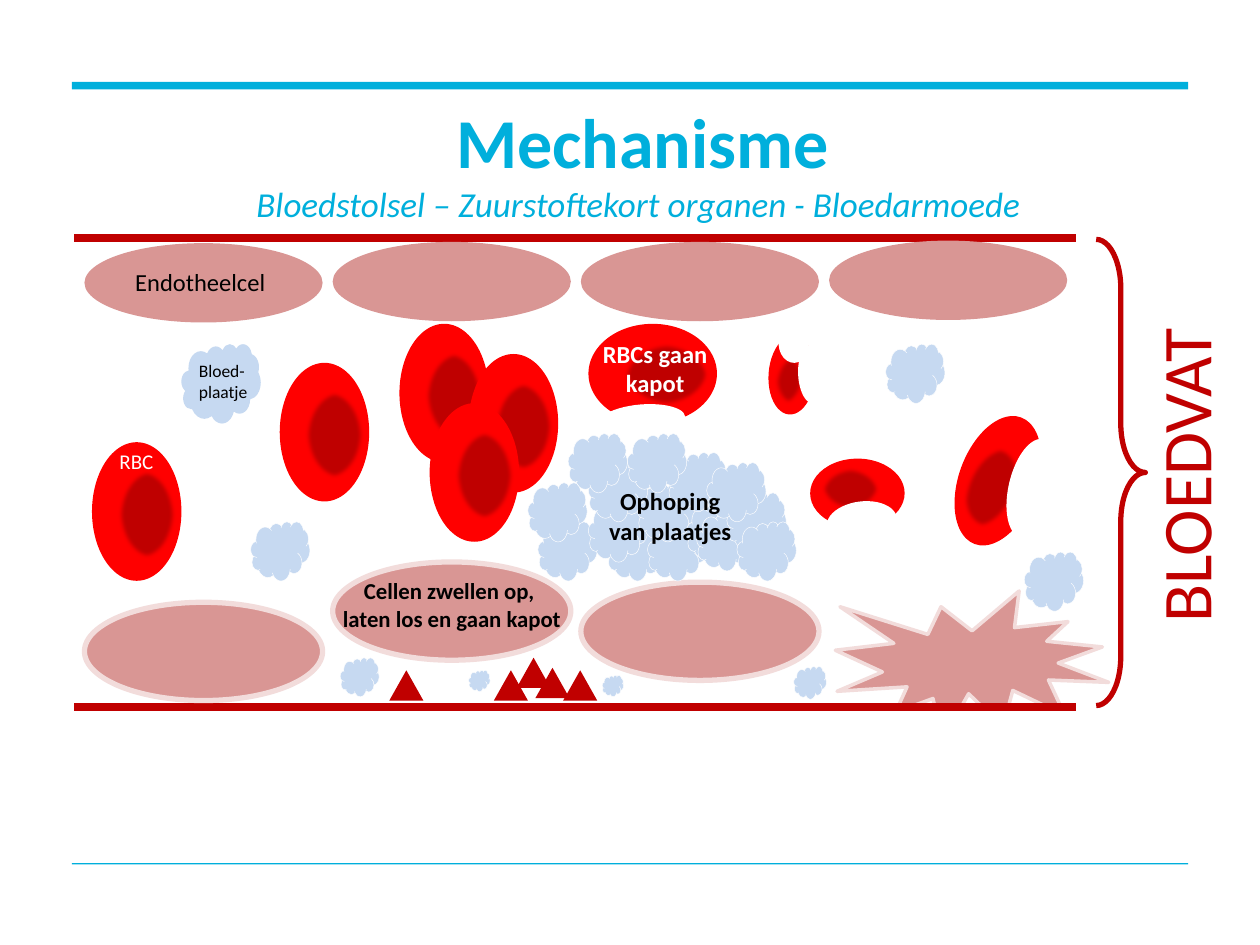
from dataclasses import dataclass
from typing import Any, Optional

from lxml import etree
from pptx import Presentation
from pptx import util as u
from pptx.dml.color import RGBColor
from pptx.enum import shapes, text
from pptx.oxml.ns import qn

EMU_PER_PX = 9144  # 100 px to the inch
COLORS = {
    "cyan": "00AFDC", "tissue": "D99694", "pale": "F2DCDB", "wall": "C00000",
    "cell": "FF0000", "platelet": "C6D9F1", "white": "FFFFFF", "black": "000000",
}
KIND = shapes.MSO_SHAPE
Box = tuple[int, int, int, int]


@dataclass(frozen=True)
class Style:
    kind: shapes.MSO_SHAPE
    fill: Optional[str] = None
    line: Optional[str] = None
    line_width: float = 0
    soft_edge: float = 0


@dataclass(frozen=True)
class Label:
    lines: tuple[str, ...]
    box: Box
    size: int
    color: str = "black"
    bold: bool = False
    centered: bool = True
    wrap: bool = False


@dataclass(frozen=True)
class BrokenCell:
    """A red cell and its nucleus share a rotation; white bites cut into them."""
    body: Box
    nucleus: Box
    rotation: float
    bites: tuple[tuple[Box, float], ...]


RULE = Style(KIND.RECTANGLE, "cyan")
MASK = Style(KIND.RECTANGLE, "white")
BURST = Style(KIND.EXPLOSION1, "tissue", "pale", 2)
ENDOTHELIUM = Style(KIND.OVAL, "tissue")
SWOLLEN = Style(KIND.OVAL, "tissue", "pale", 3)
BRACE = Style(KIND.RIGHT_BRACE, None, "wall", 3)
RED_CELL = Style(KIND.OVAL, "cell")
NUCLEUS = Style(KIND.OVAL, "wall", soft_edge=2.5)
BITE = Style(KIND.OVAL, "white")
PLATELET = Style(KIND.CLOUD, "platelet", "white", 0.25)
PLAIN_PLATELET = Style(KIND.CLOUD, "platelet")
FRAGMENT = Style(KIND.ISOSCELES_TRIANGLE, "wall")

CELL_LEFT, CELL_STEP, CELL_WIDTH = 67, 197, 189
ENDOTHELIUM_TOPS = (193, 192, 192, 191)
SWOLLEN_TOPS = (478, 446, 462)
RED_CELLS = ((73, 351), (222, 288), (317, 257), (372, 281), (341, 320))
CLOT = (
    (482, 414), (427, 414), (467, 399), (514, 414), (506, 383), (545, 399), (530, 359),
    (467, 367), (553, 406), (577, 391), (561, 367), (419, 383), (585, 414),
)
CLOT_TOP = ((498, 344), (451, 344))
LOOSE_PLATELETS = (
    (199, 414, 47), (703, 273, 47), (813, 438, 47), (270, 522, 31),
    (630, 529, 26), (478, 536, 17), (372, 532, 17),
)
FRAGMENTS = ((309, 532), (410, 522), (392, 532), (425, 530), (447, 532))
BROKEN_CELLS = (
    BrokenCell((610, 266, 37, 63), (614, 281, 25, 41), 184.1,
               (((621, 286, 47, 22), 267.1), ((615, 261, 30, 24), 267.1))),
    BrokenCell((653, 354, 55, 75), (657, 364, 36, 48), 269.8,
               (((656, 398, 56, 33), 352.7),)),
    BrokenCell((761, 328, 62, 107), (766, 353, 42, 68), 200.1,
               (((779, 369, 80, 37), 283.1),)),
    BrokenCell((467, 257, 102, 79), (495, 272, 68, 51), 0,
               (((475, 321, 69, 25), 355.4),)),
)
ENDOTHELIUM_LABEL = Label(("Endotheelcel",), (92, 207, 134, 34), 14)
RED_CELL_LABEL = Label(("RBC",), (85, 351, 47, 30), 12, "white", centered=False)
PLATELET_LABEL = Label(("Bloed-", "plaatje"), (148, 281, 59, 44), 10, centered=False)
SWOLLEN_LABEL = Label(("Cellen zwellen op, ", "laten los en gaan kapot"),
                      (260, 453, 197, 54), 13, bold=True)
CLOT_LABEL = Label(("Ophoping van plaatjes",), (469, 381, 126, 57), 14, bold=True, wrap=True)
BROKEN_LABEL = Label(("RBCs gaan kapot",), (465, 264, 110, 57), 14, "white", True, wrap=True)
VESSEL_LABEL = Label(("BLOEDVAT",), (901, 246, 88, 262), 40, "wall")


def px(*lengths: int) -> list[u.Emu]:
    return [u.Emu(length * EMU_PER_PX) for length in lengths]


def rgb(name: str) -> RGBColor:
    return RGBColor.from_string(COLORS[name])


def draw(container: Any, style: Style, box: Box, rotation: float = 0) -> Any:
    shape = container.add_shape(style.kind, *px(*box))
    shape.shadow.inherit = False
    shape.rotation = rotation
    if style.fill:
        shape.fill.solid()
        shape.fill.fore_color.rgb = rgb(style.fill)
    else:
        shape.fill.background()
    if style.line:
        shape.line.color.rgb = rgb(style.line)
        shape.line.width = u.Pt(style.line_width)
    else:
        shape.line.fill.background()
    if style.soft_edge:
        effects = shape._element.spPr.find(qn("a:effectLst"))
        etree.SubElement(effects, qn("a:softEdge"), rad=str(u.Pt(style.soft_edge)))
    return shape


def draw_wall(container: Any, top: int) -> None:
    wall = container.add_connector(shapes.MSO_CONNECTOR.STRAIGHT, *px(59, top, 854, top))
    wall.line.color.rgb = rgb("wall")
    wall.line.width = u.Pt(4.5)
    etree.SubElement(wall._element.spPr, qn("a:effectLst"))


def set_font(paragraph: Any, size: int, color: str, bold: bool, italic: bool = False) -> None:
    for run in paragraph.runs:
        run.font.name = "Calibri"
        run.font.size = u.Pt(size)
        run.font.color.rgb = rgb(color)
        run.font.bold = bold
        run.font.italic = italic


def write(container: Any, label: Label) -> Any:
    frame = container.add_textbox(*px(*label.box)).text_frame
    frame.word_wrap = label.wrap
    frame.auto_size = text.MSO_AUTO_SIZE.SHAPE_TO_FIT_TEXT
    frame.text = "\n".join(label.lines)
    for paragraph in frame.paragraphs:
        paragraph.alignment = text.PP_ALIGN.CENTER if label.centered else text.PP_ALIGN.LEFT
        set_font(paragraph, label.size, label.color, label.bold)
    return frame


def write_title(container: Any) -> None:
    frame = container.add_textbox(*px(67, 99, 886, 58)).text_frame
    frame.word_wrap = True
    frame.vertical_anchor = text.MSO_ANCHOR.MIDDLE
    frame.margin_left = frame.margin_top = frame.margin_right = frame.margin_bottom = 0
    frame.text = "Mechanisme\nBloedstolsel – Zuurstoftekort organen - Bloedarmoede "
    title, subtitle = frame.paragraphs
    title.alignment = subtitle.alignment = text.PP_ALIGN.CENTER
    set_font(title, 40, "cyan", True)
    set_font(subtitle, 20, "cyan", False, True)


def draw_red_cell(container: Any, left: int, top: int) -> None:
    group = container.add_group_shape().shapes
    draw(group, RED_CELL, (left, top, 71, 110))
    draw(group, NUCLEUS, (left + 20, top + 22, 47, 71))


def draw_broken_cell(container: Any, cell: BrokenCell) -> None:
    group = container.add_group_shape().shapes
    draw(group, RED_CELL, cell.body, cell.rotation)
    draw(group, NUCLEUS, cell.nucleus, cell.rotation)
    for box, rotation in cell.bites:
        draw(group, BITE, box, rotation)


def main() -> None:
    presentation = Presentation()
    presentation.slide_width, presentation.slide_height = px(1000, 750)
    canvas = presentation.slides.add_slide(presentation.slide_layouts[6]).shapes

    for top, height in ((65, 6), (685, 1)):
        draw(canvas, RULE, (57, top, 886, height))
    write_title(canvas)

    draw(canvas, BURST, (663, 469, 217, 118))
    draw(canvas, MASK, (703, 564, 150, 31))
    for top in (189, 561):
        draw_wall(canvas, top)
    for style, tops, height in ((ENDOTHELIUM, ENDOTHELIUM_TOPS, 63), (SWOLLEN, SWOLLEN_TOPS, 78)):
        for column, top in enumerate(tops):
            draw(canvas, style, (CELL_LEFT + column * CELL_STEP, top, CELL_WIDTH, height))
    brace = draw(canvas, BRACE, (870, 190, 39, 370))
    brace.adjustments[0], brace.adjustments[1] = 1, 0.5

    draw(canvas, PLAIN_PLATELET, (144, 273, 63, 63))
    for left, top in CLOT:
        draw(canvas, PLATELET, (left, top, 47, 47))
    for left, top in RED_CELLS:
        draw_red_cell(canvas, left, top)
    for cell in BROKEN_CELLS:
        draw_broken_cell(canvas, cell)
    for left, top, size in (*LOOSE_PLATELETS, *((x, y, 47) for x, y in CLOT_TOP)):
        draw(canvas, PLATELET, (left, top, size, size))
    for left, top in FRAGMENTS:
        draw(canvas, FRAGMENT, (left, top, 27, 24))

    for label in (ENDOTHELIUM_LABEL, RED_CELL_LABEL, PLATELET_LABEL,
                  SWOLLEN_LABEL, CLOT_LABEL, BROKEN_LABEL):
        write(canvas, label)
    vessel = write(canvas, VESSEL_LABEL)
    vessel._txBody.bodyPr.set("vert", "vert270")
    presentation.save("out.pptx")


if __name__ == "__main__":
    main()
